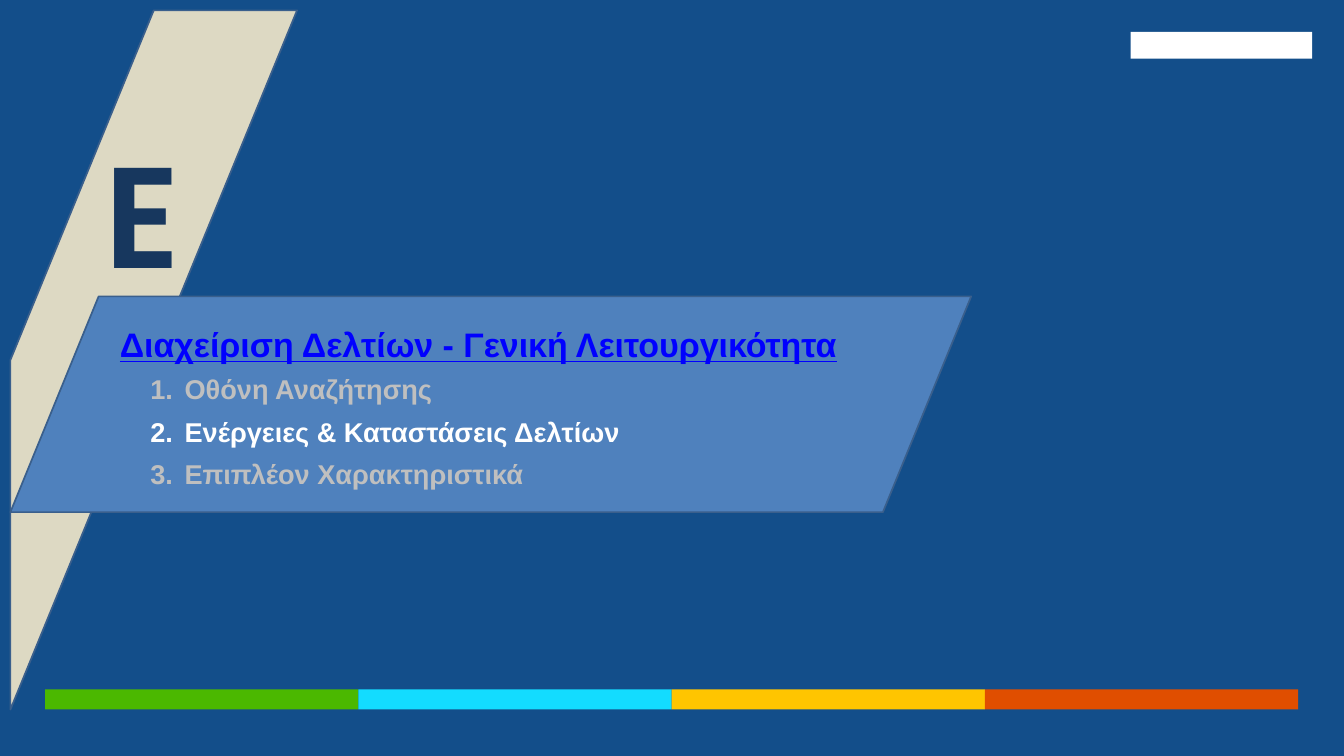
from pptx import Presentation
from pptx import util as u
from pptx.dml import color
from pptx.enum import shapes, text
from pptx.oxml import xmlchemy

Inches, Pt = u.Inches, u.Pt


def paint(target, hex_color):
    target.solid()
    target.fore_color.rgb = color.RGBColor.from_string(hex_color)


def add_block(kind, box, fill, line=None):
    shape = slide.shapes.add_shape(kind, *map(Inches, box))
    shape.shadow.inherit = False
    paint(shape.fill, fill)
    if line:
        paint(shape.line.fill, line)
        shape.line.width = Pt(2)
    else:
        shape.line.fill.background()
    return shape


presentation = Presentation()
presentation.slide_width = Inches(21.99)
presentation.slide_height = Inches(12.37)
slide = presentation.slides.add_slide(presentation.slide_layouts[1])
paint(slide.background.fill, "134E8A")

add_block(shapes.MSO_SHAPE.RECTANGLE, (18.5, 0.52, 2.97, 0.44), "FFFFFF")
add_block(shapes.MSO_SHAPE.DIAGONAL_STRIPE, (0.17, 0.17, 4.69, 11.44), "DDD9C3", "3A5F8C")

band_width = 5.125
for index, fill in enumerate(("4BB800", "13DCFF", "FFC500", "E04E00")):
    add_block(shapes.MSO_SHAPE.RECTANGLE, (0.74 + index * band_width, 11.28, band_width, 0.33), fill)

panel = add_block(shapes.MSO_SHAPE.PARALLELOGRAM, (0.17, 4.85, 15.72, 3.53), "4F81BD", "3A5F8C")
panel.adjustments[0] = 0.409

letter = slide.shapes.add_textbox(Inches(1.5), Inches(2.04), Inches(1.63), Inches(2.89))
letter.text_frame.word_wrap = True
paragraph = letter.text_frame.paragraphs[0]
paragraph.text = "Ε"
paragraph.alignment = text.PP_ALIGN.CENTER
paragraph.font.name = "Roboto Condensed"
paragraph.font.size = Pt(166)
paragraph.font.bold = True
paint(paragraph.font.fill, "17375E")

title, body = slide.shapes.title, slide.placeholders[1]
title.text_frame.text = "Διαχείριση Δελτίων - Γενική Λειτουργικότητα"
topics = (
    ("Οθόνη Αναζήτησης", "BFBFBF"),
    ("Ενέργειες & Καταστάσεις Δελτίων", "FFFFFF"),
    ("Επιπλέον Χαρακτηριστικά", "BFBFBF"),
)
body.text_frame.text = "\n".join(topic for topic, _ in topics)

for placeholder, top, height, size in ((title, 5.1, 0.84, 40), (body, 5.94, 2.1, 32)):
    placeholder.left, placeholder.top = Inches(1.96), Inches(top)
    placeholder.width, placeholder.height = Inches(12.89), Inches(height)
    slide.shapes.element.append(placeholder.element)
    frame = placeholder.text_frame
    frame.margin_left = frame.margin_right = frame.margin_top = frame.margin_bottom = 0
    frame.vertical_anchor = text.MSO_ANCHOR.TOP
    frame.auto_size = text.MSO_AUTO_SIZE.NONE
    frame.word_wrap = True
    for paragraph in frame.paragraphs:
        paragraph.alignment = text.PP_ALIGN.LEFT
        paragraph.line_spacing = 1.3
        paragraph.space_before = Pt(0)
        if placeholder is body:
            paragraph.level = 1
            properties = paragraph._p.get_or_add_pPr()
            properties.set("marL", str(Inches(1.06)))
            properties.set("indent", str(Inches(-0.56)))
            numbering = properties.makeelement(xmlchemy.qn("a:buAutoNum"), {"type": "arabicPeriod"})
            properties.append(numbering)
        paragraph.font.name = "Arial"
        paragraph.font.size = Pt(size)
        paragraph.font.bold = True

heading = title.text_frame.paragraphs[0]
heading.font.underline = True
paint(heading.font.fill, "0000FF")
for paragraph, (_, topic_color) in zip(body.text_frame.paragraphs, topics):
    paint(paragraph.font.fill, topic_color)

presentation.save("out.pptx")
